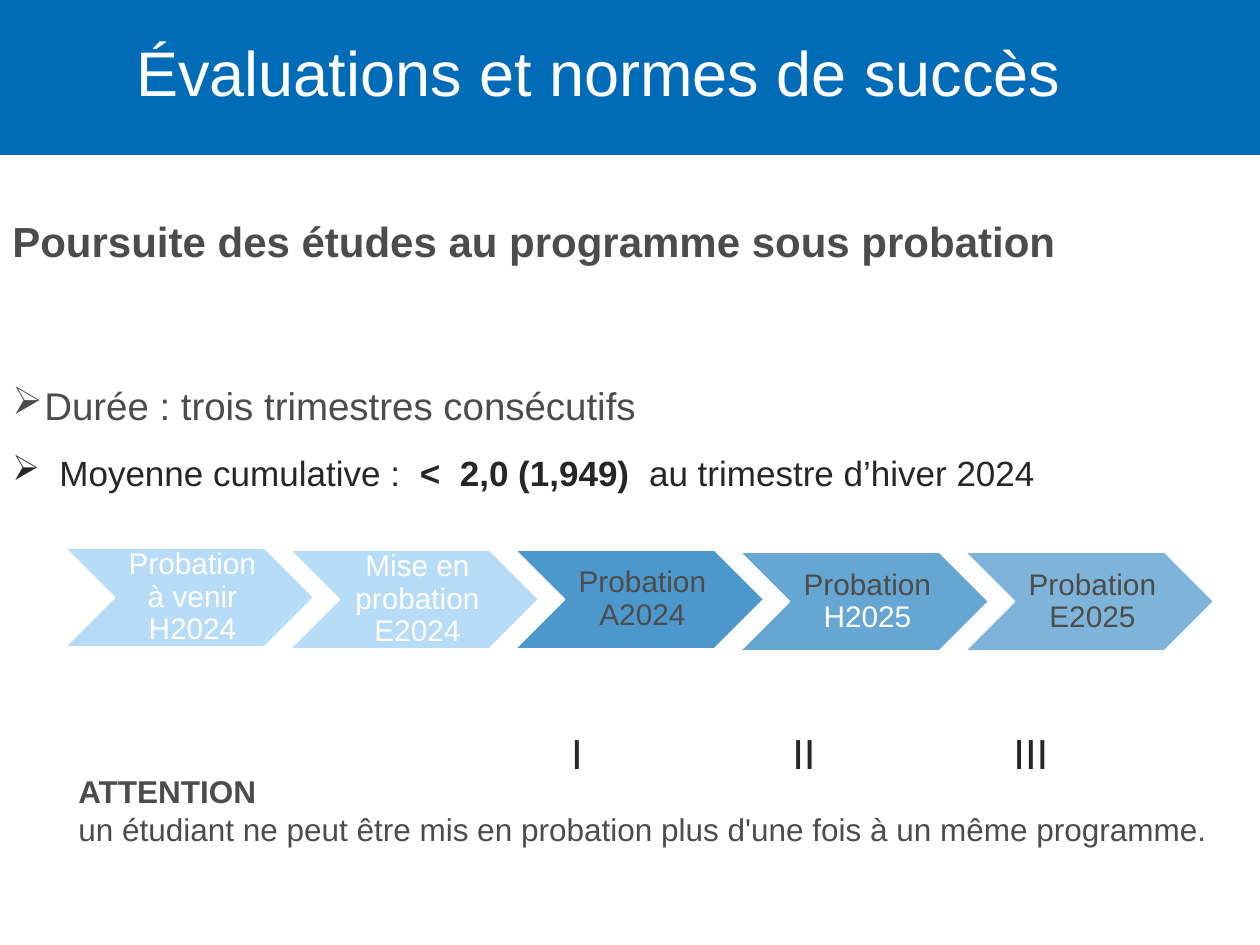
from dataclasses import dataclass

import pptx
import pptx.util
import pptx.dml.color
import pptx.enum.shapes
import pptx.enum.text
import pptx.oxml.ns
from lxml import etree

RGB = pptx.dml.color.RGBColor
ALIGN = pptx.enum.text.PP_ALIGN
ANCHOR = pptx.enum.text.MSO_ANCHOR
SHAPE = pptx.enum.shapes.MSO_SHAPE

BLUE = RGB(0x00, 0x6B, 0xB6)
PALE = RGB(0xB0, 0xD9, 0xF8)
WHITE = RGB(0xFF, 0xFF, 0xFF)
GREY = RGB(0x4D, 0x4C, 0x4A)
DARK = RGB(0x26, 0x26, 0x25)

PX_PER_INCH = 126
FONT = "Arial"
STEP_LEFT, STEP_PITCH, STEP_W, STEP_H = 65, 225, 249, 99
NUMERAL_CENTER, NUMERAL_PITCH, NUMERAL_W = 577, 227, 100


@dataclass
class Run:
    text: str
    color: RGB
    bold: bool = False


@dataclass
class Step:
    runs: list[Run]
    top: int
    fill: RGB
    alpha: int


STEPS = [
    Step([Run("Probation à venir H2024", WHITE)], 548, PALE, 90),
    Step([Run("Mise en probation E2024", WHITE)], 550, PALE, 90),
    Step([Run("Probation A2024", GREY)], 550, BLUE, 70),
    Step([Run("Probation", GREY), Run(" H2025", WHITE)], 552, BLUE, 60),
    Step([Run("Probation E2025", GREY)], 552, BLUE, 50),
]


def px(n: int) -> int:
    return round(n * 914400 / PX_PER_INCH)


def add_runs(p, runs: list[Run], size: int, align=ALIGN.LEFT, spacing: float = 1.0) -> None:
    p.alignment = align
    p.line_spacing = spacing
    for run in runs:
        r = p.add_run()
        r.text = run.text
        r.font.name = FONT
        r.font.size = pptx.util.Pt(size)
        r.font.bold = run.bold
        r.font.color.rgb = run.color


def add_box(s, left: int, top: int, width: int, height: int):
    tf = s.shapes.add_textbox(px(left), px(top), px(width), px(height)).text_frame
    tf.word_wrap = True
    return tf


def add_bullet(p, indent: int) -> None:
    pPr = p._p.get_or_add_pPr()
    pPr.set("marL", str(px(indent)))
    pPr.set("indent", str(-px(indent)))
    bu = etree.SubElement(pPr, pptx.oxml.ns.qn("a:buChar"))
    bu.set("char", "➢")


def add_shape(s, kind, left: int, top: int, width: int, height: int, fill: RGB):
    sp = s.shapes.add_shape(kind, px(left), px(top), px(width), px(height))
    sp.shadow.inherit = False
    sp.fill.solid()
    sp.fill.fore_color.rgb = fill
    sp.line.fill.background()
    return sp


def add_step(s, step: Step, left: int) -> None:
    sp = add_shape(s, SHAPE.CHEVRON, left, step.top, STEP_W, STEP_H, step.fill)
    color = sp.fill._xPr.find(".//" + pptx.oxml.ns.qn("a:srgbClr"))
    alpha = etree.SubElement(color, pptx.oxml.ns.qn("a:alpha"))
    alpha.set("val", str(step.alpha * 1000))
    sp.line.color.rgb = WHITE
    sp.line.width = pptx.util.Pt(1)
    tf = sp.text_frame
    tf.word_wrap = True
    tf.vertical_anchor = ANCHOR.MIDDLE
    tf.margin_left = px(9)
    tf.margin_right = tf.margin_top = tf.margin_bottom = px(3)
    add_runs(tf.paragraphs[0], step.runs, 17, ALIGN.CENTER, 0.9)


def main() -> None:
    prs = pptx.Presentation()
    prs.slide_width, prs.slide_height = px(1260), px(945)
    s = prs.slides.add_slide(prs.slide_layouts[6])

    add_shape(s, SHAPE.RECTANGLE, 0, 0, 1260, 155, BLUE)
    tf = add_box(s, 24, 14, 1149, 125)
    tf.vertical_anchor = ANCHOR.MIDDLE
    add_runs(tf.paragraphs[0], [Run("Évaluations et normes de succès", WHITE)], 36, ALIGN.CENTER, 0.9)

    tf = add_box(s, 0, 209, 1260, 61)
    add_runs(tf.paragraphs[0], [Run("Poursuite des études au programme sous probation", GREY, True)], 24)

    tf = add_box(s, 0, 376, 1260, 122)
    p = tf.paragraphs[0]
    add_runs(p, [Run("Durée : trois trimestres consécutifs", GREY)], 22)
    p.space_after = pptx.util.Pt(13)
    add_bullet(p, 32)
    p = tf.add_paragraph()
    add_runs(p, [
        Run("Moyenne cumulative :  ", DARK),
        Run("<  2,0 (1,949)  ", DARK, True),
        Run("au trimestre d’hiver 2024", DARK),
    ], 20)
    add_bullet(p, 47)

    for i, step in enumerate(STEPS):
        add_step(s, step, STEP_LEFT + i * STEP_PITCH)

    for i, numeral in enumerate(("I", "II", "III")):
        left = NUMERAL_CENTER + i * NUMERAL_PITCH - NUMERAL_W // 2
        tf = add_box(s, left, 721, NUMERAL_W, 61)
        add_runs(tf.paragraphs[0], [Run(numeral, DARK)], 24, ALIGN.CENTER)

    tf = add_box(s, 66, 747, 1194, 146)
    add_runs(tf.paragraphs[0], [Run("ATTENTION", GREY, True)], 18, spacing=1.5)
    note = "un étudiant ne peut être mis en probation plus d'une fois à un même programme."
    add_runs(tf.add_paragraph(), [Run(note, GREY)], 18)

    prs.save("out.pptx")


if __name__ == "__main__":
    main()
